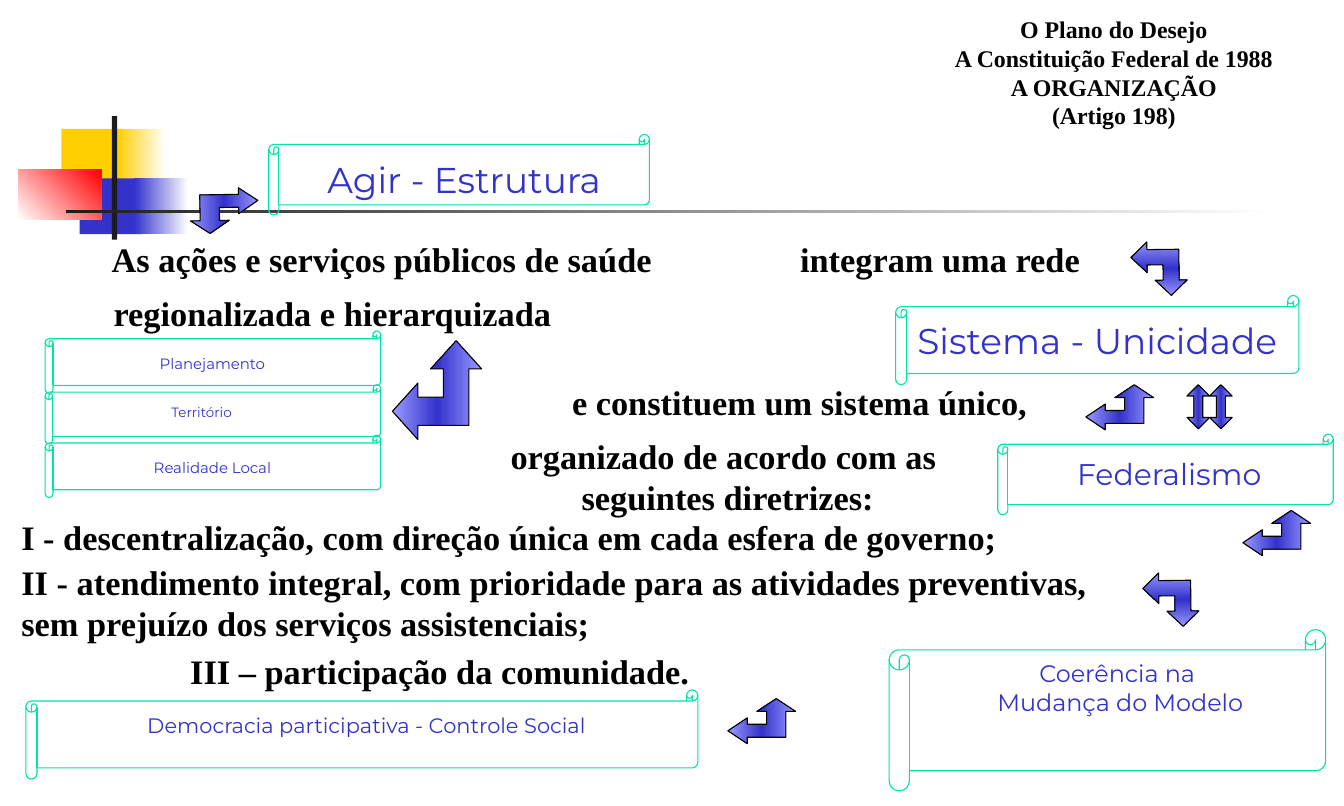
from copy import deepcopy

from pptx import Presentation
from pptx.dml.color import RGBColor
from pptx.enum import shapes, text
from pptx.util import Inches, Pt

BLACK, WHITE, BLUE, YELLOW = "000000", "FFFFFF", "3333CC", "FFCF01"
CHARCOAL, RED, LILAC, GREEN = "1C1C1C", "FF0000", "9999FF", "00E4A8"
ARROW_OUTLINE = [(5, 0), (3, 2), (4, 2), (4, 4), (2, 4), (2, 3),
                 (0, 5), (2, 7), (2, 6), (6, 6), (6, 2), (7, 2)]
ARROW_GRID = 7


def paint(shape, colors, angle=0, line=None):
    """Fill with no colour, one colour, or evenly spaced gradient stops."""
    shape.shadow.inherit = False
    if not colors:
        shape.fill.background()
    elif len(colors) == 1:
        shape.fill.solid()
        shape.fill.fore_color.rgb = RGBColor.from_string(colors[0])
    else:
        shape.fill.gradient()
        shape.fill.gradient_angle = angle
        stop_list = shape._element.spPr.find(".//{*}gsLst")
        for _ in colors[2:]:
            stop_list.append(deepcopy(stop_list[0]))
        for index, stop in enumerate(shape.fill.gradient_stops):
            stop.position = index / (len(colors) - 1)
            stop.color.rgb = RGBColor.from_string(colors[index])
    if line:
        shape.line.color.rgb = RGBColor.from_string(line)
        shape.line.width = Pt(0.75)
    else:
        shape.line.fill.background()


def write(shape, lines, size, font, color, bold=False, centered=True, wrap=True):
    frame = shape.text_frame
    frame.text = "\n".join(lines)
    frame.word_wrap = wrap
    frame.auto_size = text.MSO_AUTO_SIZE.NONE
    frame.vertical_anchor = text.MSO_ANCHOR.TOP
    for paragraph in frame.paragraphs:
        paragraph.alignment = text.PP_ALIGN.CENTER if centered else text.PP_ALIGN.LEFT
        paragraph.font.size = Pt(size)
        paragraph.font.name = font
        paragraph.font.bold = bold
        paragraph.font.color.rgb = RGBColor.from_string(color)


presentation = Presentation()
presentation.slide_width, presentation.slide_height = Inches(12.5), Inches(7.5)
slide = presentation.slides.add_slide(presentation.slide_layouts[5])

title = slide.shapes.title
title.left, title.top, title.width, title.height = map(Inches, (8.33, 0.09, 4.06, 1.17))
write(title, ["O Plano do Desejo", "A Constituição Federal de 1988",
              "A ORGANIZAÇÃO", "(Artigo 198)"], 16, "Times New Roman", BLACK, bold=True)

# Decoration: coloured blocks and crossed bars
for box, colors, angle in [
    ((0.57, 1.2, 0.6, 0.52), [YELLOW], 0),
    ((1.09, 1.2, 0.45, 0.52), [YELLOW, WHITE], 0),
    ((0.74, 1.66, 0.58, 0.52), [BLUE], 0),
    ((1.25, 1.66, 0.5, 0.52), [BLUE, WHITE], 0),
    ((0.17, 1.58, 0.77, 0.46), [WHITE, RED], 45),
    ((1.04, 1.08, 0.05, 1.15), [CHARCOAL], 0),
    ((0.61, 1.95, 11.25, 0.03), [CHARCOAL, WHITE], 0),
]:
    block = slide.shapes.add_shape(shapes.MSO_SHAPE.RECTANGLE, *map(Inches, box))
    paint(block, colors, angle)

# Text of the article
for box, lines, centered, wrap in [
    ((0.42, 2.67, 5.35, 0.48), ["regionalizada e hierarquizada"], True, False),
    ((0.21, 2.17, 6.77, 0.5), ["As ações e serviços públicos de saúde "], True, True),
    ((6.35, 2.17, 4.79, 0.48), ["integram uma rede"], True, True),
    ((4.67, 3.5, 5.54, 0.48), ["e constituem um sistema único,"], True, False),
    ((4.06, 4, 5.42, 0.87),
     ["organizado de acordo com as ", "seguintes diretrizes:"], True, True),
    ((0.1, 4.75, 11.77, 0.5),
     ["I - descentralização, com direção única em cada esfera de governo;"], False, True),
    ((0.1, 5.17, 10.62, 0.87),
     ["II - atendimento integral, com prioridade para as atividades preventivas, "
      "sem prejuízo dos serviços assistenciais;"], False, True),
    ((1.67, 6, 6.25, 0.5), ["III – participação da comunidade."], False, True),
]:
    article = slide.shapes.add_textbox(*map(Inches, box))
    write(article, lines, 23, "Times New Roman", BLACK, True, centered, wrap)

# Bent double arrows
for left, top, width, height, rotation in [
    (6.77, 6.5, 0.63, 0.42, 0),
    (10.1, 3.58, 0.63, 0.42, 0),
    (11.56, 4.75, 0.63, 0.42, 0),
    (3.65, 3.17, 0.83, 0.92, 0),
    (10.64, 5.32, 0.5, 0.52, 269.3),
    (10.53, 2.24, 0.5, 0.52, 269.3),
    (1.77, 1.75, 0.63, 0.42, 179),
]:
    scale = Inches(width) / ARROW_GRID, Inches(height) / ARROW_GRID
    builder = slide.shapes.build_freeform(*ARROW_OUTLINE[0], scale=scale)
    builder.add_line_segments(ARROW_OUTLINE[1:], close=True)
    arrow = builder.convert_to_shape(Inches(left), Inches(top))
    arrow.rotation = rotation
    paint(arrow, [LILAC, BLUE, LILAC], line=BLACK)

for left in (11.04, 11.25):
    arrow = slide.shapes.add_shape(shapes.MSO_SHAPE.UP_DOWN_ARROW, Inches(left),
                                   Inches(3.58), Inches(0.21), Inches(0.41))
    arrow.adjustments[1] = 0.395
    paint(arrow, [LILAC, BLUE, LILAC], line=BLACK)

# Scrolls with their labels
for label_box, scroll_box, size, lines in [
    ((2.85, 1.42, 3.02, 0.47), (2.5, 1.25, 3.54, 0.75), 24, ["Agir - Estrutura "]),
    ((8.54, 2.92, 3.33, 0.47), (8.33, 2.75, 3.75, 0.83), 24, ["Sistema - Unicidade"]),
    ((0.62, 3.25, 2.71, 0.33), (0.42, 3.08, 3.12, 0.58), 10, ["Planejamento"]),
    ((0.73, 3.71, 2.29, 0.25), (0.42, 3.58, 3.12, 0.55), 9, ["Território"]),
    ((0.62, 4.22, 2.71, 0.25), (0.42, 4.05, 3.12, 0.58), 10, ["Realidade Local"]),
    ((9.69, 4.19, 2.37, 0.4), (9.28, 4.04, 3.12, 0.75), 20, ["Federalismo"]),
    ((8.65, 6.08, 3.54, 1.08), (8.27, 5.86, 4.06, 1.5), 16,
     ["Coerência na ", "Mudança do Modelo"]),
    ((0.52, 6.58, 5.83, 0.56), (0.24, 6.42, 6.25, 0.83), 14,
     ["Democracia participativa - Controle Social "]),
]:
    label = slide.shapes.add_textbox(*map(Inches, label_box))
    write(label, lines, size, "Montserrat", BLUE, wrap=False)
    scroll = slide.shapes.add_shape(shapes.MSO_SHAPE.HORIZONTAL_SCROLL,
                                    *map(Inches, scroll_box))
    paint(scroll, [], line=GREEN)

presentation.save("out.pptx")
